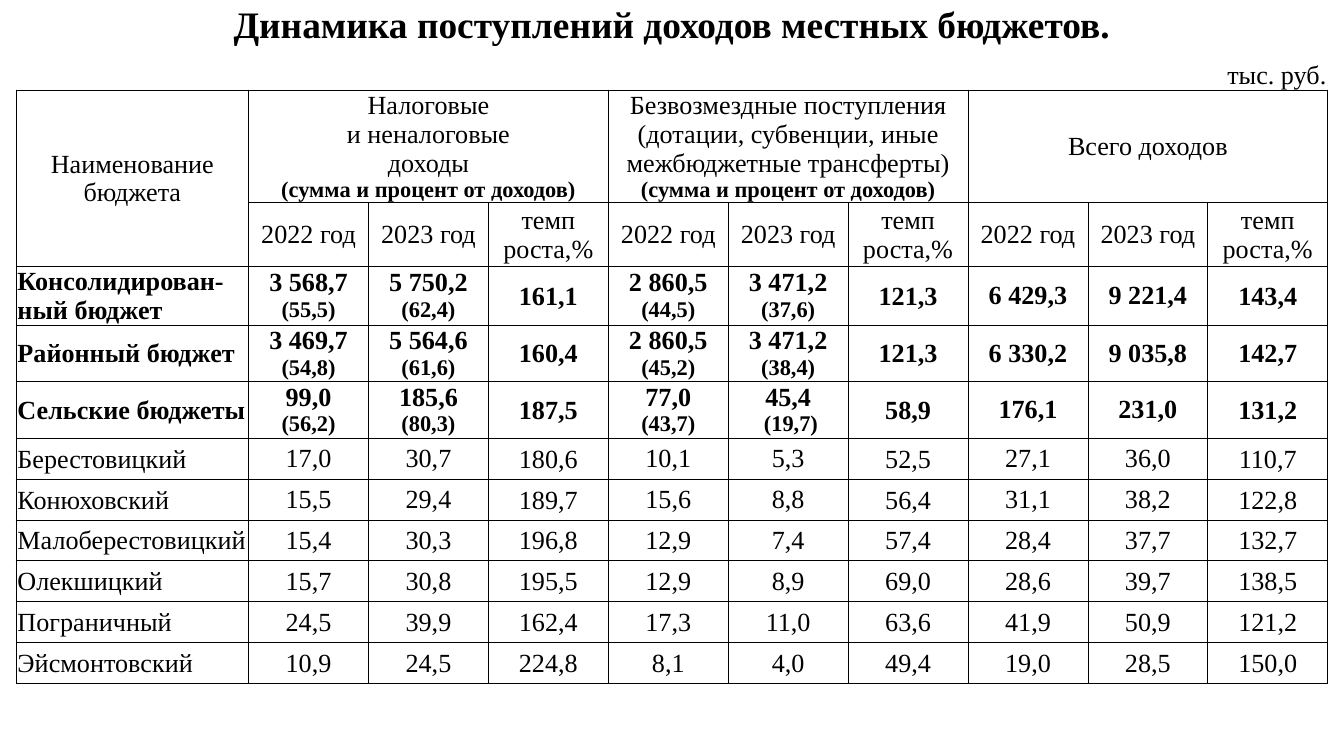
from lxml.etree import SubElement
from pptx import Presentation
from pptx.dml.color import RGBColor
from pptx.enum.text import MSO_ANCHOR, PP_ALIGN
from pptx.oxml.ns import qn
from pptx.util import Inches, Pt

COLORS = {"text": "000000", "border": "000000"}
FONT = "Times New Roman"
TITLE_ROW, UNIT_ROW, GROUP_ROW, YEAR_ROW, FIRST_DATA_ROW = range(5)
BOLD_ROWS = (TITLE_ROW, 4, 5, 6)

TABLE_WIDTH, NAME_WIDTH = 9.76, 1.73
COL_WIDTHS = [NAME_WIDTH] + [(TABLE_WIDTH - NAME_WIDTH) / 9] * 9
ROW_HEIGHTS = [0.32, 0.32, 0.83, 0.47, 0.44, 0.42, 0.42] + [1.83 / 6] * 6

SHARE_NOTE = "(сумма и процент от доходов)"
GROUPS = [
    "Налоговые\nи неналоговые\nдоходы\n" + SHARE_NOTE,
    "Безвозмездные поступления (дотации, субвенции, иные "
    "межбюджетные трансферты)\n" + SHARE_NOTE,
    "Всего доходов",
]
YEARS = ["2022 год", "2023 год", "темп\nроста,%"]
BUDGETS = [
    ("Консолидирован-ный бюджет", "3 568,7\n(55,5)", "5 750,2\n(62,4)", "161,1",
     "2 860,5\n(44,5)", "3 471,2\n(37,6)", "121,3", "6 429,3", "9 221,4", "143,4"),
    ("Районный бюджет", "3 469,7\n(54,8)", "5 564,6\n(61,6)", "160,4",
     "2 860,5\n(45,2)", "3 471,2\n(38,4)", "121,3", "6 330,2", "9 035,8", "142,7"),
    ("Сельские бюджеты", "99,0\n(56,2)", "185,6\n(80,3)", "187,5",
     "77,0\n(43,7)", "45,4\n (19,7)", "58,9", "176,1", "231,0", "131,2"),
    ("Берестовицкий", "17,0", "30,7", "180,6", "10,1", "5,3", "52,5", "27,1", "36,0", "110,7"),
    ("Конюховский", "15,5", "29,4", "189,7", "15,6", "8,8", "56,4", "31,1", "38,2", "122,8"),
    ("Малоберестовицкий", "15,4", "30,3", "196,8", "12,9", "7,4", "57,4", "28,4", "37,7", "132,7"),
    ("Олекшицкий", "15,7", "30,8", "195,5", "12,9", "8,9", "69,0", "28,6", "39,7", "138,5"),
    ("Пограничный", "24,5", "39,9", "162,4", "17,3", "11,0", "63,6", "41,9", "50,9", "121,2"),
    ("Эйсмонтовский", "10,9", "24,5", "224,8", "8,1", "4,0", "49,4", "19,0", "28,5", "150,0"),
]


def set_borders(cell, visible):
    """Draw the sides named in visible (L, R, T, B) and hide the others."""
    tc_pr = cell._tc.get_or_add_tcPr()
    for side in "LRTB":
        ln = SubElement(tc_pr, qn("a:ln" + side), w=str(Pt(0.5)))
        if side in visible:
            fill = SubElement(ln, qn("a:solidFill"))
            SubElement(fill, qn("a:srgbClr"), val=COLORS["border"])
        else:
            SubElement(ln, qn("a:noFill"))


def write_cell(cell, text, align, size, bold):
    """Write one paragraph per line; lines in brackets are small and bold."""
    tf = cell.text_frame
    for i, line in enumerate(text.split("\n")):
        p = tf.add_paragraph() if i else tf.paragraphs[0]
        p.alignment = align
        small = line.strip().startswith("(")
        r = p.add_run()
        r.text = line
        r.font.name = FONT
        r.font.size = Pt(12 if small else size)
        r.font.bold = bold or small
        r.font.color.rgb = RGBColor.from_string(COLORS["text"])


prs = Presentation()
prs.slide_width, prs.slide_height = Inches(10), Inches(10 * 9 / 16)
s = prs.slides.add_slide(prs.slide_layouts[6])

table = s.shapes.add_table(
    len(ROW_HEIGHTS), len(COL_WIDTHS), Inches(0.12), Inches(0.03),
    Inches(TABLE_WIDTH), Inches(sum(ROW_HEIGHTS))).table
table.first_row = False
table.horz_banding = False
for column, width in zip(table.columns, COL_WIDTHS):
    column.width = Inches(width)
for row, height in zip(table.rows, ROW_HEIGHTS):
    row.height = Inches(height)

# Texts by (row, column)
texts = {
    (TITLE_ROW, 0): "Динамика поступлений доходов местных бюджетов.",
    (UNIT_ROW, 9): "тыс. руб.",
    (GROUP_ROW, 0): "Наименование бюджета",
}
for g, group in enumerate(GROUPS):
    texts[GROUP_ROW, 1 + 3 * g] = group
    for y, year in enumerate(YEARS):
        texts[YEAR_ROW, 1 + 3 * g + y] = year
for r, budget in enumerate(BUDGETS, FIRST_DATA_ROW):
    for c, value in enumerate(budget):
        texts[r, c] = value

# Merged areas
table.cell(TITLE_ROW, 0).merge(table.cell(TITLE_ROW, 9))
table.cell(GROUP_ROW, 0).merge(table.cell(YEAR_ROW, 0))
for c in (1, 3, 5):
    table.cell(UNIT_ROW, c).merge(table.cell(UNIT_ROW, c + 1))
for c in (1, 4, 7):
    table.cell(GROUP_ROW, c).merge(table.cell(GROUP_ROW, c + 2))

for r in range(len(ROW_HEIGHTS)):
    for c in range(len(COL_WIDTHS)):
        cell = table.cell(r, c)
        set_borders(cell, {TITLE_ROW: "", UNIT_ROW: "B"}.get(r, "LRTB"))
        cell.fill.background()
        cell.margin_left = cell.margin_right = cell.margin_top = Inches(0.01)
        cell.margin_bottom = Inches(0.01 if r >= FIRST_DATA_ROW and c % 3 else 0)
        cell.vertical_anchor = MSO_ANCHOR.BOTTOM if r <= UNIT_ROW else MSO_ANCHOR.MIDDLE
        if (r, c) not in texts:
            continue
        if r == UNIT_ROW:
            align = PP_ALIGN.RIGHT
        elif r >= FIRST_DATA_ROW and c == 0:
            align = PP_ALIGN.LEFT
        else:
            align = PP_ALIGN.CENTER
        size = 20 if r == TITLE_ROW else 14
        write_cell(cell, texts[r, c], align, size, r in BOLD_ROWS)

prs.save("out.pptx")
